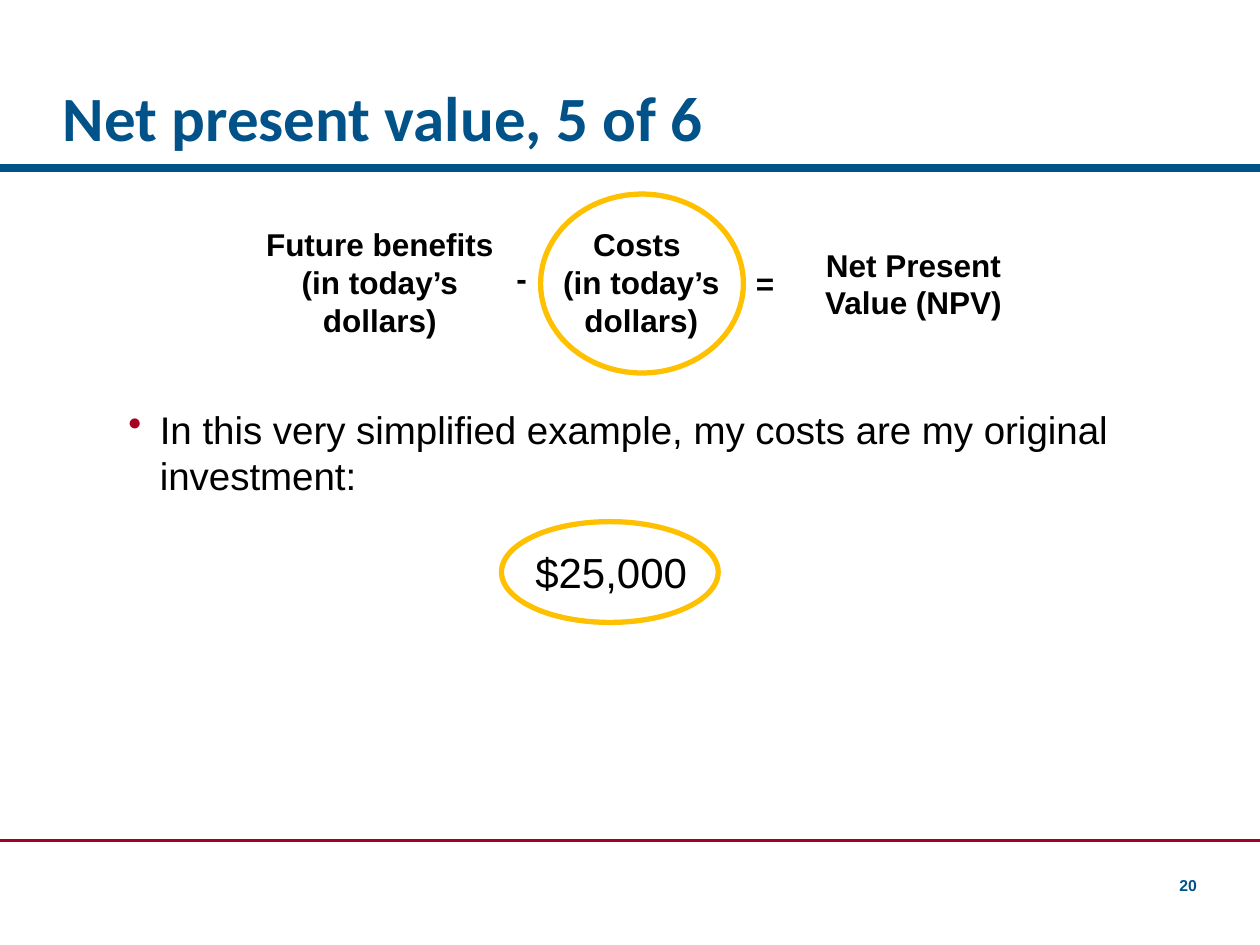
from lxml import etree
from pptx import Presentation
from pptx.dml.color import RGBColor
from pptx.enum.shapes import MSO_CONNECTOR, MSO_SHAPE
from pptx.enum.text import MSO_ANCHOR, PP_ALIGN
from pptx.oxml.ns import qn
from pptx.util import Inches, Pt

BLUE = RGBColor(0x00, 0x52, 0x88)
RED = RGBColor(0xA5, 0x00, 0x21)
GOLD = RGBColor(0xFF, 0xC0, 0x00)
BLACK = RGBColor(0x00, 0x00, 0x00)
LEFT, CENTER, RIGHT = PP_ALIGN.LEFT, PP_ALIGN.CENTER, PP_ALIGN.RIGHT
TOP, BOTTOM = MSO_ANCHOR.TOP, MSO_ANCHOR.BOTTOM
STRAIGHT = MSO_CONNECTOR.STRAIGHT
OVAL = MSO_SHAPE.OVAL

prs = Presentation()
prs.slide_width = Inches(10)
prs.slide_height = Inches(7.5)
slide = prs.slides.add_slide(prs.slide_layouts[6])


def add_text(box, lines, size, color=BLACK, bold=False, align=LEFT,
             anchor=TOP, font="Arial", wrap=True):
    frame = slide.shapes.add_textbox(*map(Inches, box)).text_frame
    frame.word_wrap = wrap
    frame.vertical_anchor = anchor
    frame.text = "\n".join(lines)
    for paragraph in frame.paragraphs:
        paragraph.alignment = align
        paragraph.font.name = font
        paragraph.font.size = Pt(size)
        paragraph.font.bold = bold
        paragraph.font.color.rgb = color
    return frame


for y, color, width in [(1.33, BLUE, 4.5), (6.67, RED, 1.5)]:
    rule = slide.shapes.add_connector(STRAIGHT, 0, Inches(y), Inches(10), Inches(y))
    rule.line.color.rgb = color
    rule.line.width = Pt(width)
    etree.SubElement(rule._element.spPr, qn("a:effectLst"))

title = add_text((0.5, 0, 9, 1.28), ["Net present value, 5 of 6"], 36, BLUE,
                 bold=True, anchor=BOTTOM, font="Calibri")
title.margin_left = 0
title.paragraphs[0].line_spacing = 0.9

equation_terms = [
    ((2, 1.74, 2.03, 1.01), ["Future benefits (in today’s dollars)"]),
    ((4.09, 1.74, 2, 1.01), ["Costs ", "(in today’s dollars)"]),
    ((6.25, 1.9, 2, 0.71), ["Net Present Value (NPV)"]),
]
for box, lines in equation_terms:
    add_text(box, lines, 18, bold=True, align=CENTER)

for box, operator in [((5.9, 2.05, 0.35, 0.4), "="), ((4, 2.01, 0.29, 0.4), "-")]:
    add_text(box, [operator], 18, bold=True, wrap=False)

example = add_text(
    (0.92, 3.17, 8.58, 1.17),
    ["In this very simplified example, my costs are my original investment:"], 22)
properties = example.paragraphs[0]._p.get_or_add_pPr()
properties.set("marL", str(Inches(0.25)))
properties.set("indent", str(Inches(-0.25)))
bullet_color = etree.Element(qn("a:buClr"))
etree.SubElement(bullet_color, qn("a:srgbClr"), val=str(RED))
bullet = etree.Element(qn("a:buChar"), char="•")
properties.insert(0, bullet_color)
properties.insert(1, bullet)

add_text((4.15, 4.29, 1.42, 0.51), ["$25,000"], 24, wrap=False)

for box in [(4.29, 1.54, 1.61, 1.42), (3.98, 4.14, 1.72, 0.8)]:
    highlight = slide.shapes.add_shape(OVAL, *map(Inches, box))
    highlight.shadow.inherit = False
    highlight.fill.background()
    highlight.line.color.rgb = GOLD
    highlight.line.width = Pt(3)

page_number = add_text((9.17, 6.9, 0.33, 0.25), ["20"], 9, BLUE, bold=True,
                       align=RIGHT, anchor=BOTTOM)
page_number.margin_left = page_number.margin_right = 0

prs.save("out.pptx")
